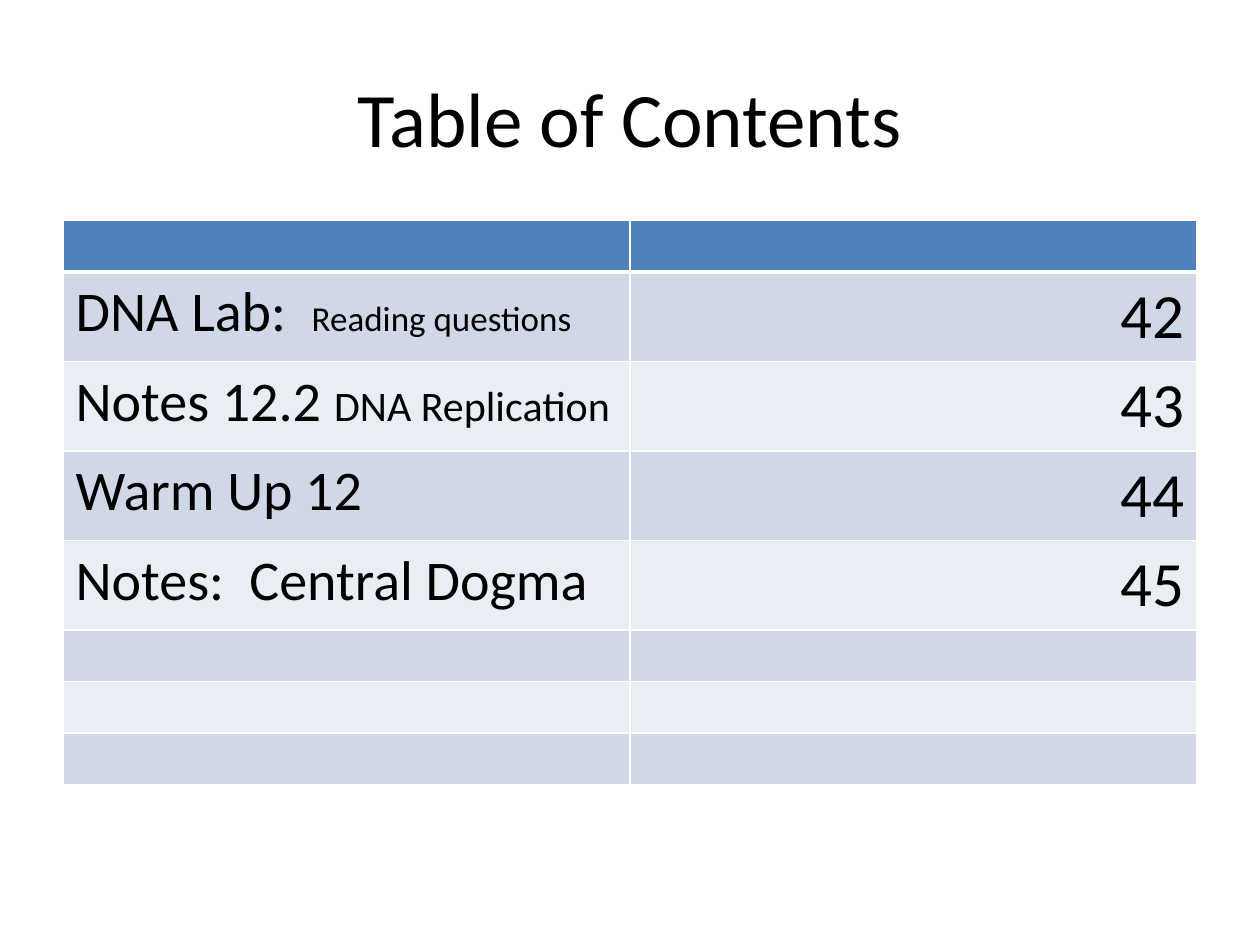
from lxml import etree
from pptx import Presentation
from pptx import util as u
from pptx.dml.color import RGBColor
from pptx.enum import text
from pptx.oxml.ns import qn

TITLE = "Table of Contents"
# Each entry: (heading, size), (detail, size), page number
ENTRIES = [
    ([("DNA Lab:  ", 32), ("Reading questions", 20)], "42"),
    ([("Notes 12.2 ", 32), ("DNA Replication", 24)], "43"),
    ([("Warm Up 12", 32)], "44"),
    ([("Notes:  Central Dogma", 32)], "45"),
]
SPARE_ROWS = 3
TITLE_SIZE, PAGE_SIZE = 44, 36

FONT = "Calibri"
BLACK = RGBColor(0x00, 0x00, 0x00)
WHITE = RGBColor(0xFF, 0xFF, 0xFF)
HEADER = RGBColor(0x4F, 0x81, 0xBD)
BANDS = [RGBColor(0xD0, 0xD8, 0xE8), RGBColor(0xE9, 0xED, 0xF4)]

WIDTH, HEIGHT = u.Inches(10), u.Inches(7.5)
MARGIN = int(WIDTH * 0.05)
CONTENT_WIDTH = WIDTH - 2 * MARGIN
EMPTY_ROW, ENTRY_ROW = u.Inches(0.41), u.Inches(0.71)


def write(paragraph, runs, align):
    paragraph.alignment = align
    for words, size in runs:
        run = paragraph.add_run()
        run.text = words
        for name, value in {"name": FONT, "size": u.Pt(size)}.items():
            setattr(run.font, name, value)
        run.font.color.rgb = BLACK


def set_borders(cell, widths):
    """Draw white cell borders; widths maps L, R, T, B to points."""
    properties = cell._tc.get_or_add_tcPr()
    for side, points in widths.items():
        line = etree.SubElement(properties, qn(f"a:ln{side}"), w=str(u.Pt(points)))
        fill = etree.SubElement(line, qn("a:solidFill"))
        etree.SubElement(fill, qn("a:srgbClr"), val=str(WHITE))


def add_title(slide):
    title = slide.shapes.add_textbox(
        MARGIN, int(HEIGHT * 0.04), CONTENT_WIDTH, u.Inches(1.25)
    ).text_frame
    title.word_wrap = True
    title.vertical_anchor = text.MSO_ANCHOR.MIDDLE
    write(title.paragraphs[0], [(TITLE, TITLE_SIZE)], text.PP_ALIGN.CENTER)


def add_contents(slide):
    heights = [EMPTY_ROW] + [ENTRY_ROW] * len(ENTRIES) + [EMPTY_ROW] * SPARE_ROWS
    contents = slide.shapes.add_table(
        len(heights), 2, MARGIN, u.Inches(1.75), CONTENT_WIDTH, sum(heights)
    ).table

    for index, (row, height) in enumerate(zip(contents.rows, heights)):
        row.height = height
        for cell in row.cells:
            set_borders(cell, {
                "L": 1, "R": 1,
                "T": 3 if index == 1 else 1,
                "B": 3 if index == 0 else 1,
            })
            cell.fill.solid()
            cell.fill.fore_color.rgb = BANDS[(index - 1) % 2] if index else HEADER

    for index, (topic, page) in enumerate(ENTRIES, start=1):
        topic_cell, page_cell = contents.rows[index].cells
        write(topic_cell.text_frame.paragraphs[0], topic, text.PP_ALIGN.LEFT)
        write(page_cell.text_frame.paragraphs[0], [(page, PAGE_SIZE)],
              text.PP_ALIGN.RIGHT)


def main():
    deck = Presentation()
    deck.slide_width, deck.slide_height = WIDTH, HEIGHT
    slide = deck.slides.add_slide(deck.slide_layouts[6])
    add_title(slide)
    add_contents(slide)
    deck.save("out.pptx")


if __name__ == "__main__":
    main()
